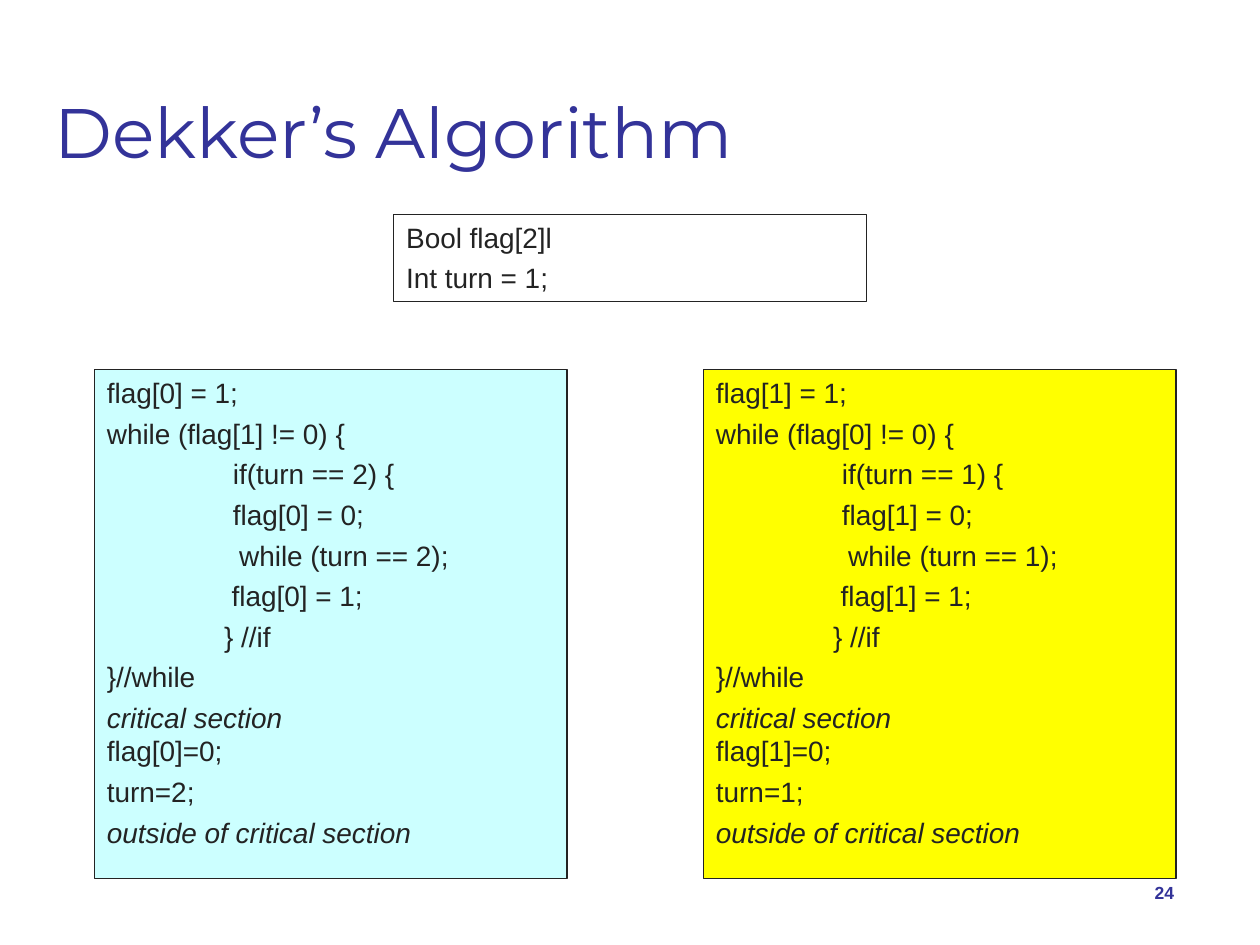
"""Build the slide on Dekker's algorithm: shared variables and the two processes."""
from pptx import Presentation, util as u
from pptx.dml.color import RGBColor
from pptx.enum import shapes, text

NAVY = RGBColor(0x33, 0x33, 0x99)
INK = RGBColor(0x23, 0x23, 0x23)
CYAN = RGBColor(0xCC, 0xFF, 0xFF)
YELLOW = RGBColor(0xFF, 0xFF, 0x00)
COLS, ROWS = 120, 90


class Deck:
    """Holds the style and the current slide; lengths are grid columns and rows."""

    def __init__(self):
        self.prs = Presentation()
        self.prs.slide_width, self.prs.slide_height = u.Inches(10), u.Inches(7.5)
        self.s = self.prs.slides.add_slide(self.prs.slide_layouts[5])

    def grid(self, x, y, w, h):
        """Turn columns and rows into slide lengths."""
        dx, dy = self.prs.slide_width / COLS, self.prs.slide_height / ROWS
        return [int(v) for v in (x * dx, y * dy, w * dx, h * dy)]

    def font(self, p, name, size, color, bold=False):
        """Style a whole paragraph."""
        f = p.font
        f.name, f.size, f.bold = name, u.Pt(size), bold
        f.color.rgb = color

    def title(self, words, *box):
        """Place and format the title placeholder."""
        sp = self.s.shapes.title
        sp.left, sp.top, sp.width, sp.height = self.grid(*box)
        tf = sp.text_frame
        tf.text = words
        tf.vertical_anchor = text.MSO_ANCHOR.BOTTOM
        p = tf.paragraphs[0]
        p.alignment = text.PP_ALIGN.LEFT
        self.font(p, "Montserrat", 40, NAVY)

    def number(self, words, *box):
        """Add the slide number."""
        tf = self.s.shapes.add_textbox(*self.grid(*box)).text_frame
        tf.text = words
        tf.word_wrap = False
        tf.vertical_anchor = text.MSO_ANCHOR.MIDDLE
        p = tf.paragraphs[0]
        p.alignment = text.PP_ALIGN.RIGHT
        self.font(p, "Arial", 10, NAVY, bold=True)

    def code(self, lines, fill, *box):
        """Add a code box from (indent in inches, plain or italic runs) lines."""
        sp = self.s.shapes.add_shape(shapes.MSO_SHAPE.RECTANGLE, *self.grid(*box))
        sp.shadow.inherit = False
        if fill is None:
            sp.fill.background()
        else:
            sp.fill.solid()
            sp.fill.fore_color.rgb = fill
        sp.line.color.rgb, sp.line.width = INK, u.Pt(0.75)
        tf = sp.text_frame
        tf.word_wrap = True
        tf.vertical_anchor = text.MSO_ANCHOR.TOP
        for i, (indent, *runs) in enumerate(lines):
            p = tf.add_paragraph() if i else tf.paragraphs[0]
            p.alignment = text.PP_ALIGN.LEFT
            p.space_before = u.Pt(4)
            p._p.get_or_add_pPr().set("marL", str(u.Inches(indent)))
            self.font(p, "Arial", 16, INK)
            for j, (words, italic) in enumerate(runs):
                if j:
                    p.add_line_break()
                r = p.add_run()
                r.text = words
                r.font.italic = italic


def process(me, other, turn):
    """Return the code lines of one process."""
    return [
        (0, (f"flag[{me}] = 1;", False)),
        (0, (f"while (flag[{other}] != 0) {{", False)),
        (1, (f"if(turn == {turn}) {{", False)),
        (1, (f"flag[{me}] = 0;", False)),
        (1.05, (f"while (turn == {turn});", False)),
        (0.99, (f"flag[{me}] = 1;", False)),
        (0.93, ("} //if", False)),
        (0, ("}//while", False)),
        (0, ("critical section", True), (f"flag[{me}]=0;", False)),
        (0, (f"turn={turn};", False)),
        (0, ("outside of critical section", True)),
    ]


def main():
    """Build and save the slide."""
    deck = Deck()
    deck.title("Dekker’s Algorithm", 4, 2, 112, 15)
    deck.number("24", 105, 82, 8, 6)
    deck.code(process(0, 1, 2), CYAN, 9, 35.2, 45, 48.5)
    deck.code(process(1, 0, 1), YELLOW, 67, 35.2, 45, 48.5)
    shared = [(0, ("Bool flag[2]l", False)), (0, ("Int turn = 1;", False))]
    deck.code(shared, None, 37.5, 20.4, 45, 8.3)
    deck.prs.save("out.pptx")


if __name__ == "__main__":
    main()
